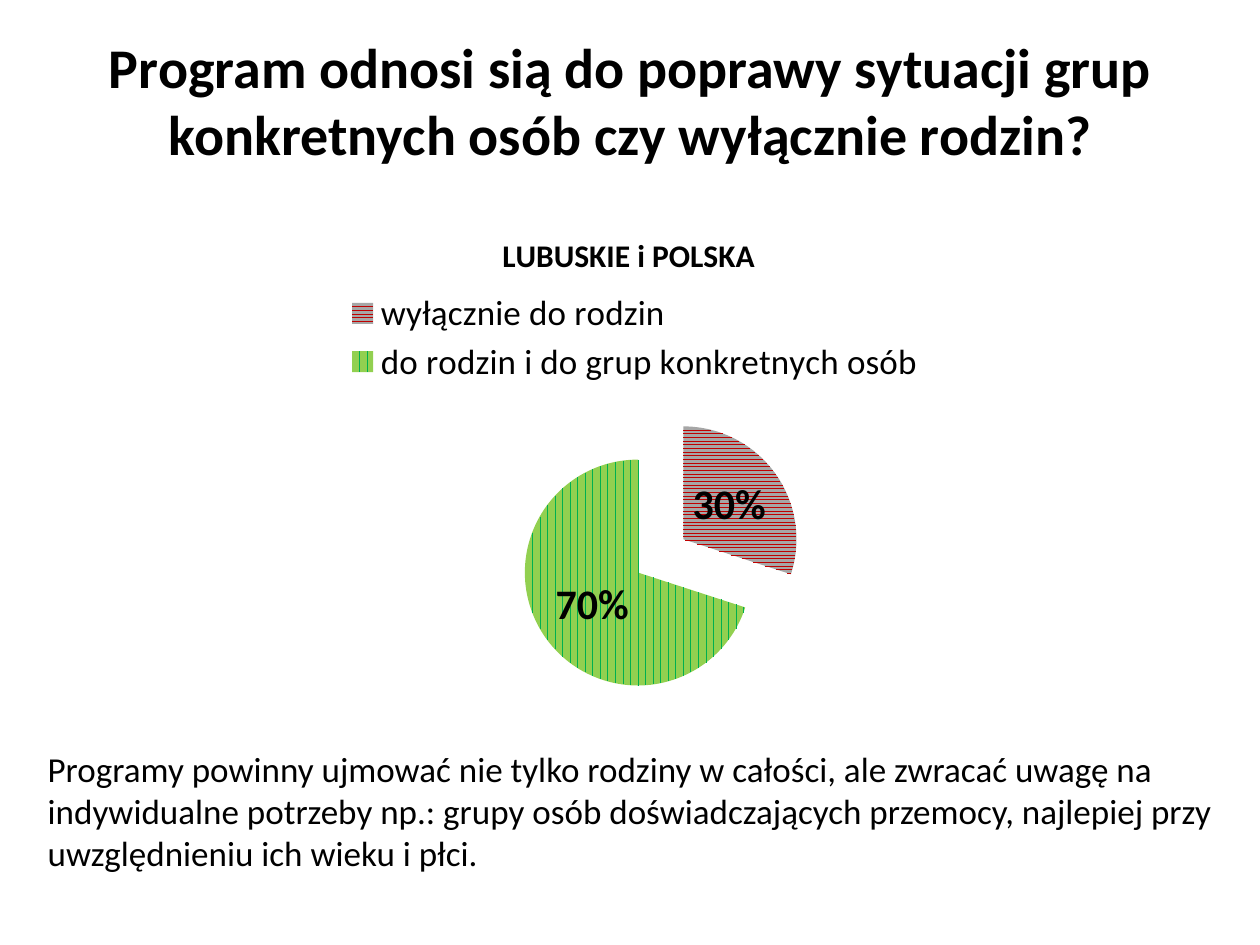
from lxml.etree import SubElement
from pptx import Presentation
from pptx.chart.data import CategoryChartData
from pptx.dml.color import RGBColor
from pptx.enum.chart import XL_CHART_TYPE, XL_LABEL_POSITION, XL_LEGEND_POSITION
from pptx.enum.dml import MSO_PATTERN
from pptx.enum.text import PP_ALIGN
from pptx.oxml.ns import qn
from pptx.util import Inches, Pt

hue = RGBColor.from_string
FACE, INK = "Calibri", "000000"

deck = Presentation()
deck.slide_width, deck.slide_height = Inches(10), Inches(7.5)
slide = deck.slides.add_slide(deck.slide_layouts[6])
W, H = deck.slide_width, deck.slide_height


def style(font, size, bold=False):
    font.name, font.size, font.bold = FACE, Pt(size), bold
    font.color.rgb = hue(INK)


def write(text, top, high, size=20, bold=False, align=PP_ALIGN.LEFT):
    box = slide.shapes.add_textbox(int(W * 0.028), int(H * top), int(W * 0.945), int(H * high))
    box.text_frame.word_wrap = True
    para = box.text_frame.paragraphs[0]
    para.alignment = align
    run = para.add_run()
    run.text = text
    style(run.font, size, bold)


# Heading
write("Program odnosi sią do poprawy sytuacji grup konkretnych osób czy wyłącznie rodzin?",
      0.028, 0.157, size=32, bold=True, align=PP_ALIGN.CENTER)

# Pie chart
data = CategoryChartData()
data.categories = ["wyłącznie do rodzin", "do rodzin i do grup konkretnych osób"]
data.add_series("Series 1", (30, 70))
chart = slide.shapes.add_chart(
    XL_CHART_TYPE.PIE, int(W * 0.093), int(H * 0.219), int(W * 0.814), int(H * 0.564), data).chart
style(chart.font, 10)

# Chart title and legend
chart.has_title = True
title = chart.chart_title
title.include_in_layout = False
title.text_frame.text = "LUBUSKIE i POLSKA"
style(title.text_frame.paragraphs[0].runs[0].font, 18, True)
chart.has_legend = True
key = chart.legend
key.position = XL_LEGEND_POSITION.TOP
key.include_in_layout = False
style(key.font, 20)

# Slices: pattern, line colour, ground colour
plot = chart.plots[0]
plot.vary_by_categories = True
pie = plot.series[0]
looks = [(MSO_PATTERN.ZIG_ZAG, "C00000", "A6A6A6"),
         (MSO_PATTERN.DASHED_VERTICAL, "00B050", "92D050")]
for spot, (kind, fore, back) in enumerate(looks):
    fill = pie.points[spot].format.fill
    fill.patterned()
    fill.pattern = kind
    fill.fore_color.rgb, fill.back_color.rgb = hue(fore), hue(back)

# Pull the slices apart
node = pie._element
burst = SubElement(node, qn("c:explosion"), val="25")
node.find(qn("c:dPt")).addprevious(burst)

# Percent labels
plot.has_data_labels = True
tags = plot.data_labels
tags.show_percentage, tags.show_value = True, False
tags.number_format, tags.number_format_is_linked = "0%", False
tags.position = XL_LABEL_POSITION.CENTER
style(tags.font, 24, True)

# Places inside the chart, as shares of its size
root = chart._chartSpace.chart
places = [("c:title", "c:tx", {"x": 0.37, "y": 0.04}),
          ("c:legend", "c:legendPos", {"x": 0.22, "y": 0.15, "w": 0.57, "h": 0.19}),
          ("c:plotArea", None, {"x": 0.39, "y": 0.39, "w": 0.28, "h": 0.53})]
for name, prior, spots in places:
    part = root.find(qn(name))
    for old in part.findall(qn("c:layout")):
        part.remove(old)
    lay = SubElement(part, qn("c:layout"))
    if prior:
        part.find(qn(prior)).addnext(lay)
    else:
        part.insert(0, lay)
    hand = SubElement(lay, qn("c:manualLayout"))
    if not prior:
        SubElement(hand, qn("c:layoutTarget"), val="inner")
    for axis in "xy":
        SubElement(hand, qn(f"c:{axis}Mode"), val="edge")
    for side, share in spots.items():
        SubElement(hand, qn(f"c:{side}"), val=str(share))

# Closing remark
write("Programy powinny ujmować nie tylko rodziny w całości, ale zwracać uwagę na "
      "indywidualne potrzeby np.: grupy osób doświadczających przemocy, najlepiej przy "
      "uwzględnieniu ich wieku i płci.", 0.784, 0.148)

deck.save("out.pptx")
